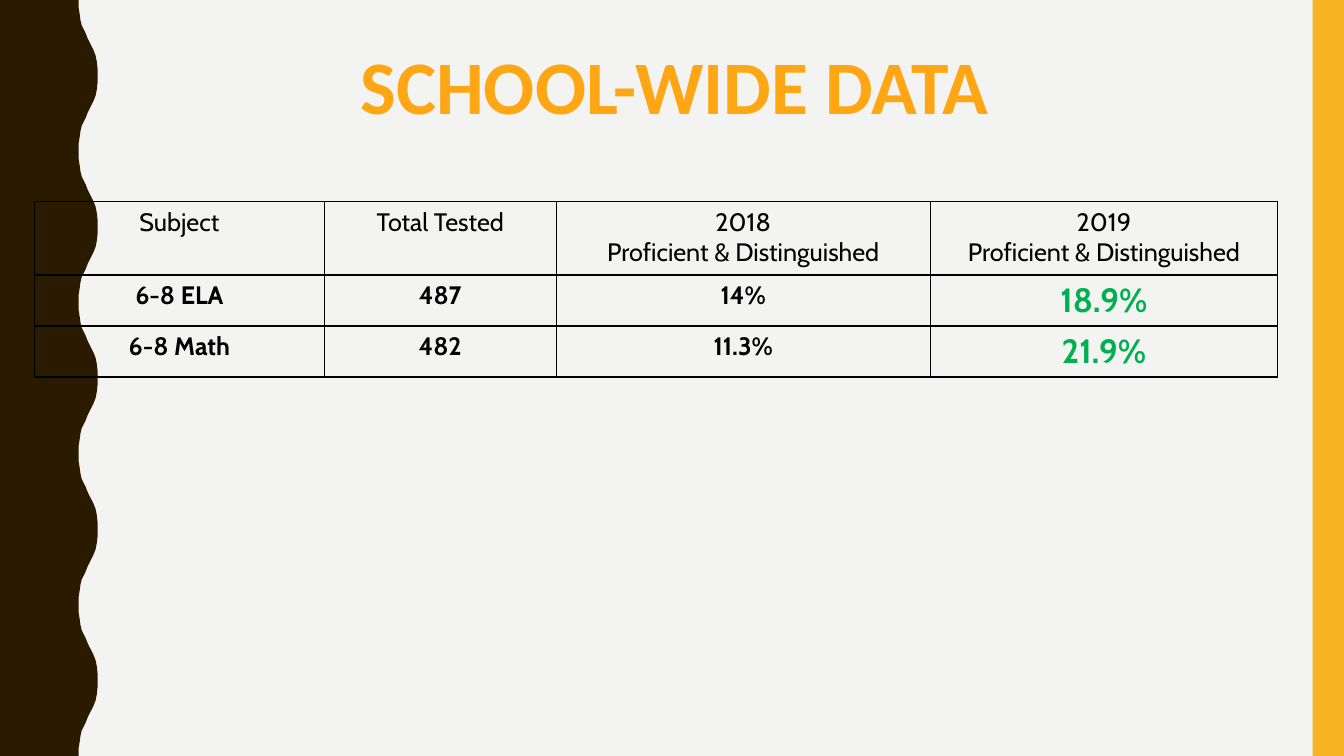
"""Builds the school-wide data slide with its proficiency table."""
from lxml import etree
from pptx import Presentation
from pptx import util as u
from pptx.dml.color import RGBColor
from pptx.enum import shapes, text
from pptx.oxml import ns

TITLE = "SCHOOL-WIDE DATA"
RESULTS = [
    ("Subject", "Total Tested", "2018\nProficient & Distinguished", "2019\nProficient & Distinguished"),
    ("6-8 ELA", "487", "14%", "18.9%"),
    ("6-8 Math", "482", "11.3%", "21.9%"),
]
COLUMN_WIDTHS = (7.3, 5.85, 9.42, 8.76)
ROW_HEIGHTS = (1.85, 1.28, 1.28)
BLACK, GREEN, GOLD, ORANGE = "000000", "00B050", "F8B323", "FFA615"
BROWN, PAPER = "2A1A00", "F3F3F2"
WIDTH, HEIGHT, STRIPE = 33.87, 19.05, 0.79
WAVE_COUNT = 5
WAVE_PERIOD = HEIGHT / WAVE_COUNT
RISE = [(1.98, 0), (1.98, 0.18), (2.01, 0.36), (2.03, 0.51), (2.06, 0.64),
        (2.11, 0.74), (2.16, 0.84), (2.21, 0.97), (2.26, 1.07), (2.31, 1.17),
        (2.36, 1.27), (2.41, 1.4), (2.44, 1.55), (2.46, 1.73), (2.46, 1.9)]


def paint(fill, color):
    fill.solid()
    fill.fore_color.rgb = RGBColor.from_string(color)


def style(paragraph, font, size, color, bold):
    paragraph.alignment = text.PP_ALIGN.CENTER
    for run in paragraph.runs:
        run.font.name, run.font.size, run.font.bold = font, u.Pt(size), bold
        paint(run.font.fill, color)


def decorate(shape, color):
    paint(shape.fill, color)
    shape.line.fill.background()
    shape.shadow.inherit = False


def outline(cell):
    properties = cell._tc.get_or_add_tcPr()
    for side in ("a:lnL", "a:lnR", "a:lnT", "a:lnB"):
        border = etree.SubElement(properties, ns.qn(side), w=str(u.Pt(1)))
        ink = etree.SubElement(border, ns.qn("a:solidFill"))
        etree.SubElement(ink, ns.qn("a:srgbClr"), val=BLACK)
    cell.fill.background()


def add_wave(slide):
    fall = [(x, WAVE_PERIOD - y) for x, y in reversed(RISE)]
    edge = [(x, y + number * WAVE_PERIOD) for number in range(WAVE_COUNT) for x, y in RISE + fall]
    points = [(u.Cm(x), u.Cm(y)) for x, y in edge + [(0, HEIGHT)]]
    builder = slide.shapes.build_freeform(0, 0)
    builder.add_line_segments(points, close=True)
    decorate(builder.convert_to_shape(), BROWN)


def add_results(slide):
    table = slide.shapes.add_table(
        len(RESULTS), len(COLUMN_WIDTHS), u.Cm(0.87), u.Cm(5.08),
        u.Cm(sum(COLUMN_WIDTHS)), u.Cm(sum(ROW_HEIGHTS))).table
    table.first_row = table.horz_banding = False
    for column, width in zip(table.columns, COLUMN_WIDTHS):
        column.width = u.Cm(width)
    for row, height in zip(table.rows, ROW_HEIGHTS):
        row.height = u.Cm(height)
    for r, result in enumerate(RESULTS):
        for c, wording in enumerate(result):
            cell = table.cell(r, c)
            cell.text_frame.text = wording
            outline(cell)
            latest = r > 0 and c == len(result) - 1
            size, color = (24, GREEN) if latest else (18, BLACK)
            for paragraph in cell.text_frame.paragraphs:
                style(paragraph, "Cabin", size, color, r > 0)


def add_title(slide):
    frame = slide.shapes.add_textbox(u.Cm(6.45), u.Cm(0.86), u.Cm(21.11), u.Cm(2.57)).text_frame
    frame.word_wrap = True
    frame.text = TITLE
    style(frame.paragraphs[0], "Calibri", 54, ORANGE, True)


def main():
    deck = Presentation()
    deck.slide_width, deck.slide_height = u.Cm(WIDTH), u.Cm(HEIGHT)
    slide = deck.slides.add_slide(deck.slide_layouts[6])
    paint(slide.background.fill, PAPER)
    add_wave(slide)
    stripe = slide.shapes.add_shape(
        shapes.MSO_SHAPE.RECTANGLE, u.Cm(WIDTH - STRIPE), 0, u.Cm(STRIPE), u.Cm(HEIGHT))
    decorate(stripe, GOLD)
    add_results(slide)
    add_title(slide)
    deck.save("out.pptx")


if __name__ == "__main__":
    main()
